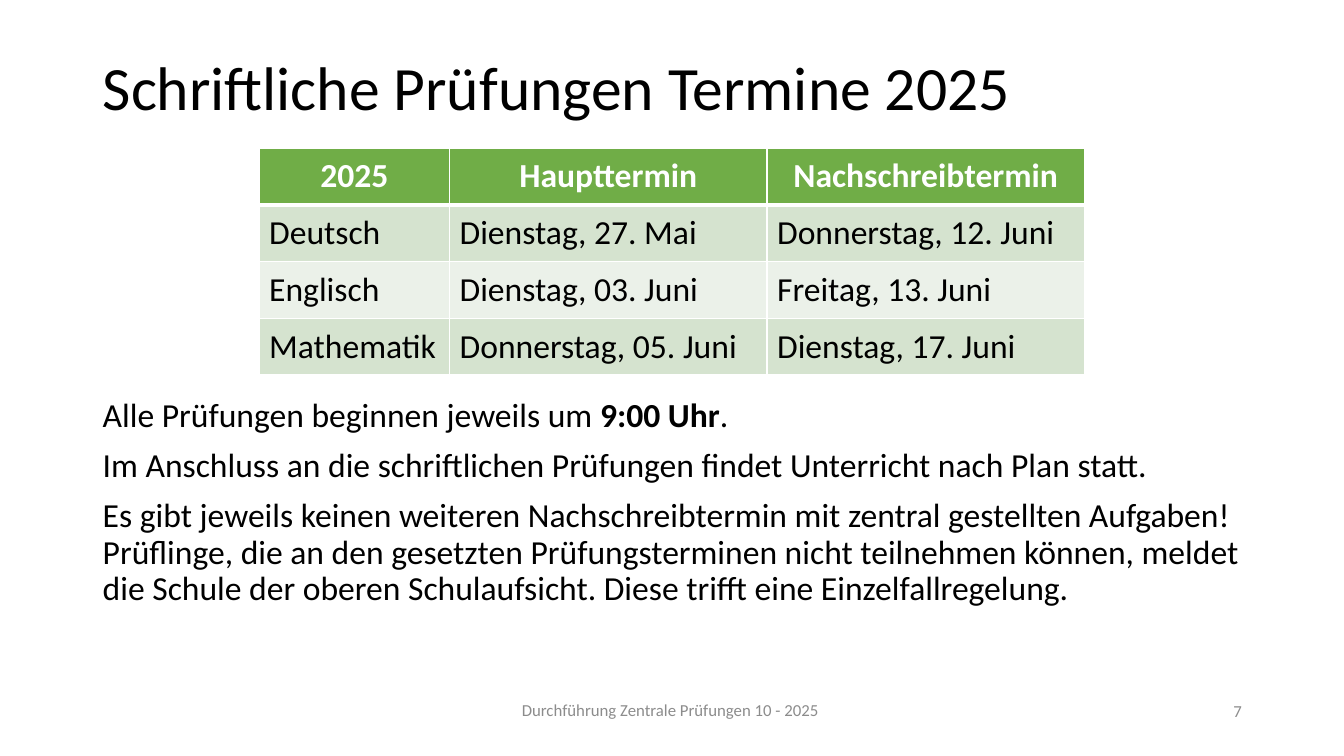
from lxml.etree import SubElement
from pptx import Presentation
from pptx.dml.color import RGBColor
from pptx.enum.text import MSO_ANCHOR, PP_ALIGN
from pptx.oxml.ns import qn
from pptx.util import Cm, Pt

BLACK = RGBColor(0x00, 0x00, 0x00)
WHITE = RGBColor(0xFF, 0xFF, 0xFF)
GREY = RGBColor(0x8C, 0x8C, 0x8C)
GREEN = RGBColor(0x70, 0xAD, 0x47)
BAND_DARK = RGBColor(0xD5, 0xE3, 0xCF)
BAND_LIGHT = RGBColor(0xEB, 0xF1, 0xE9)

LEFT, WIDTH = 2.34, 29.21
EXAM_DATES = [
    ["2025", "Haupttermin", "Nachschreibtermin"],
    ["Deutsch", "Dienstag, 27. Mai", "Donnerstag, 12. Juni"],
    ["Englisch", "Dienstag, 03. Juni", "Freitag, 13. Juni"],
    ["Mathematik", "Donnerstag, 05. Juni", "Dienstag, 17. Juni"],
]
NOTES = [
    [("Alle Prüfungen beginnen jeweils um ", False), ("9:00 Uhr", True), (".", False)],
    [("Im Anschluss an die schriftlichen Prüfungen findet Unterricht nach Plan statt.", False)],
    [("Es gibt jeweils keinen weiteren Nachschreibtermin mit zentral gestellten Aufgaben! "
      "Prüflinge, die an den gesetzten Prüfungsterminen nicht teilnehmen können, meldet "
      "die Schule der oberen Schulaufsicht. Diese trifft eine Einzelfallregelung.", False)],
]


def apply_format(target, values):
    for name, value in values.items():
        setattr(target, name, value)


class SlideBuilder:
    def __init__(self, deck, font_name="Calibri"):
        self.page = deck.slides.add_slide(deck.slide_layouts[6])
        self.font_name = font_name

    def span(self, para, text, size, color, bold=False):
        span = para.add_run()
        span.text = text
        apply_format(span.font, {"name": self.font_name, "size": Pt(size), "bold": bold})
        span.font.color.rgb = color

    def text(self, area, paragraphs, size, color=BLACK, para_format=None, frame_format=None):
        """Add a text box; each paragraph is a list of (text, bold) pairs."""
        frame = self.page.shapes.add_textbox(*map(Cm, area)).text_frame
        apply_format(frame, {"word_wrap": True, **(frame_format or {})})
        for index, pieces in enumerate(paragraphs):
            para = frame.add_paragraph() if index else frame.paragraphs[0]
            apply_format(para, para_format or {})
            if index:
                para.space_before = Pt(10)
            for text, bold in pieces:
                self.span(para, text, size, color, bold)

    def borders(self, cell, widths):
        """Draw white cell borders; widths maps L, R, T, B to points."""
        properties = cell._tc.get_or_add_tcPr()
        for side, width in widths.items():
            line = SubElement(properties, qn(f"a:ln{side}"), w=str(Pt(width)))
            fill = SubElement(line, qn("a:solidFill"))
            SubElement(fill, qn("a:srgbClr"), val=str(WHITE))

    def table(self, left, top, column_widths, row_height, rows):
        area = (left, top, sum(column_widths), row_height * len(rows))
        table = self.page.shapes.add_table(len(rows), len(column_widths), *map(Cm, area)).table
        for column, width in zip(table.columns, column_widths):
            column.width = Cm(width)
        for row_index, values in enumerate(rows):
            header = row_index == 0
            band = BAND_DARK if row_index % 2 else BAND_LIGHT
            for column_index, value in enumerate(values):
                cell = table.cell(row_index, column_index)
                cell.vertical_anchor = MSO_ANCHOR.MIDDLE
                self.borders(cell, {"L": 1, "R": 1, "T": 3 if row_index == 1 else 1,
                                    "B": 3 if header else 1})
                cell.fill.solid()
                cell.fill.fore_color.rgb = GREEN if header else band
                para = cell.text_frame.paragraphs[0]
                para.alignment = PP_ALIGN.CENTER if header else PP_ALIGN.LEFT
                self.span(para, value, 24, WHITE if header else BLACK, header)


def main():
    deck = Presentation()
    apply_format(deck, {"slide_width": Cm(33.87), "slide_height": Cm(19.05)})
    slide = SlideBuilder(deck)
    middle = {"vertical_anchor": MSO_ANCHOR.MIDDLE}
    slide.text((12.9, 17.5, 8.05, 0.76), [[("Durchführung Zentrale Prüfungen 10 - 2025", False)]],
               12, GREY, frame_format={"word_wrap": False})
    slide.text((LEFT, 1.3, WIDTH, 1.96), [[("Schriftliche Prüfungen Termine 2025", False)]],
               44, para_format={"line_spacing": 0.9}, frame_format=middle)
    slide.table(6.53, 3.73, [4.8, 8, 8], 1.43, EXAM_DATES)
    slide.text((23.93, 17.4, 7.62, 1.02), [[("7", False)]], 12, GREY,
               {"alignment": PP_ALIGN.RIGHT}, middle)
    slide.text((LEFT, 9.91, WIDTH, 7.26), NOTES, 24, para_format={"line_spacing": 0.9})
    deck.save("out.pptx")


if __name__ == "__main__":
    main()
